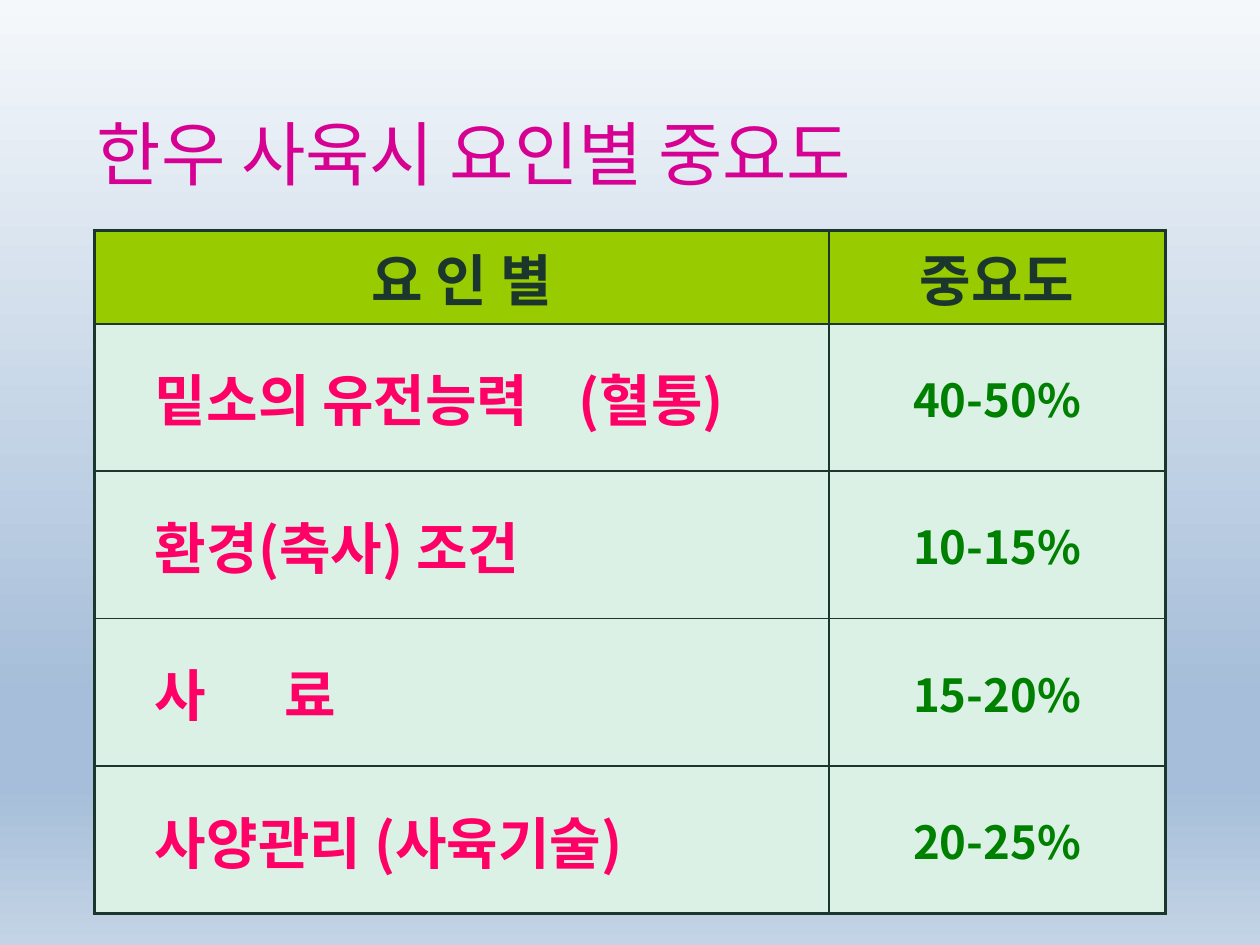
from lxml import etree
from pptx import Presentation
from pptx.dml.color import RGBColor
from pptx.enum.text import MSO_ANCHOR, PP_ALIGN
from pptx.oxml.ns import qn
from pptx.util import Inches, Pt

MIDDLE = MSO_ANCHOR.MIDDLE
LEFT, CENTER = PP_ALIGN.LEFT, PP_ALIGN.CENTER

MAGENTA = RGBColor(0xD6, 0x00, 0x93)
DARK_GREEN = RGBColor(0x1B, 0x37, 0x2D)
LIME = RGBColor(0x99, 0xCC, 0x00)
MINT = RGBColor(0xDB, 0xF1, 0xE5)
PINK = RGBColor(0xFF, 0x00, 0x66)
GREEN = RGBColor(0x00, 0x80, 0x00)
SKY_STOPS = [
    (0, RGBColor(0xF5, 0xF8, 0xFB)),
    (74, RGBColor(0xA6, 0xBE, 0xD9)),
    (83, RGBColor(0xA6, 0xBE, 0xD9)),
    (100, RGBColor(0xC4, 0xD4, 0xE6)),
]

FONT = "Noto Sans CJK KR"
THIN, THICK = Pt(1), Pt(2.25)
HEADER = ("요 인 별", "중요도")
FACTORS = [
    ("밑소의 유전능력\t(혈통)", "40-50%", 3.36),
    ("환경(축사) 조건", "10-15%", None),
    ("사\t료", "15-20%", 1.03),
    ("사양관리 (사육기술)", "20-25%", None),
]


def add_color(parent, color):
    etree.SubElement(parent, qn("a:srgbClr"), val=str(color))


def paint_background(slide):
    fill = slide.background.fill
    fill.gradient()
    fill.gradient_angle = 270
    stop_list = slide.background._cSld.find(".//" + qn("a:gsLst"))
    for stop in list(stop_list):
        stop_list.remove(stop)
    for position, color in SKY_STOPS:
        stop = etree.SubElement(stop_list, qn("a:gs"), pos=str(position * 1000))
        add_color(stop, color)


def write_text(paragraph, text, size, color, bold=False, align=LEFT, tab=None):
    paragraph.text = text
    paragraph.alignment = align
    if tab:
        tabs = etree.SubElement(paragraph._p.get_or_add_pPr(), qn("a:tabLst"))
        etree.SubElement(tabs, qn("a:tab"), pos=str(Inches(tab)), algn="l")
    font = paragraph.font
    font.name = FONT
    font.size = Pt(size)
    font.bold = bold
    font.color.rgb = color
    latin = font._element.find(qn("a:latin"))
    latin.addnext(etree.Element(qn("a:ea"), typeface=FONT))


def add_title(slide, left, top, width, height):
    box = slide.shapes.add_textbox(left, top, width, height)
    frame = box.text_frame
    frame.word_wrap = True
    frame.vertical_anchor = MIDDLE
    write_text(frame.paragraphs[0], "한우 사육시 요인별 중요도", 40, MAGENTA)


def set_borders(cell, widths):
    properties = cell._tc.get_or_add_tcPr()
    for index, (side, width) in enumerate(widths.items()):
        line = etree.Element(qn("a:ln" + side), w=str(width))
        add_color(etree.SubElement(line, qn("a:solidFill")), DARK_GREEN)
        properties.insert(index, line)


def add_factor_table(slide, left, top, width, height):
    row_count = len(FACTORS) + 1
    table = slide.shapes.add_table(row_count, 2, left, top, width, height).table
    table.columns[0].width = Inches(5.83)
    table.columns[1].width = width - Inches(5.83)
    header_height = Inches(0.74)
    table.rows[0].height = header_height
    for row in list(table.rows)[1:]:
        row.height = (height - header_height) // len(FACTORS)

    for column, text in enumerate(HEADER):
        paragraph = table.cell(0, column).text_frame.paragraphs[0]
        write_text(paragraph, text, 32, DARK_GREEN, True, CENTER)
    for row, (factor, share, tab) in enumerate(FACTORS, start=1):
        name_cell, share_cell = table.cell(row, 0), table.cell(row, 1)
        name_cell.margin_left = Inches(0.48)
        write_text(name_cell.text_frame.paragraphs[0], factor, 32, PINK, True, tab=tab)
        write_text(share_cell.text_frame.paragraphs[0], share, 26, GREEN, True, CENTER)

    for row in range(row_count):
        for column in range(2):
            cell = table.cell(row, column)
            cell.vertical_anchor = MIDDLE
            cell.fill.solid()
            cell.fill.fore_color.rgb = MINT if row else LIME
            set_borders(cell, {
                "L": THIN if column else THICK,
                "R": THICK if column else THIN,
                "T": THIN if row else THICK,
                "B": THICK if row == row_count - 1 else THIN,
            })


def main():
    presentation = Presentation()
    presentation.slide_width = Inches(10)
    presentation.slide_height = Inches(7.5)
    slide = presentation.slides.add_slide(presentation.slide_layouts[6])
    paint_background(slide)
    add_title(slide, Inches(0.67), Inches(0.5), Inches(8.92), Inches(1.42))
    add_factor_table(slide, Inches(0.75), Inches(1.83), Inches(8.5), Inches(5.42))
    presentation.save("out.pptx")


if __name__ == "__main__":
    main()
